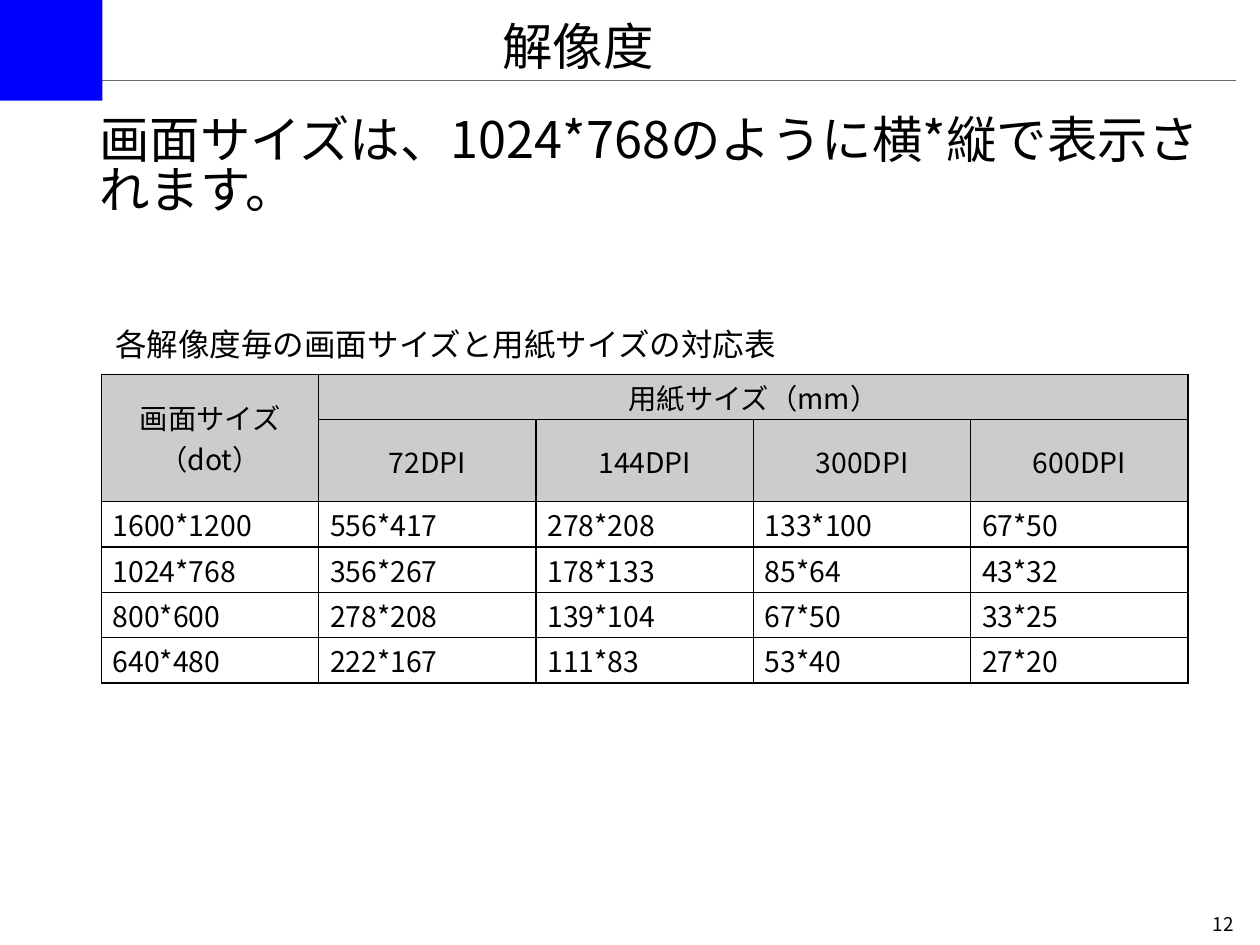
from pptx import Presentation
from pptx.dml.color import RGBColor
from pptx.enum import shapes, text
from pptx.oxml import parse_xml
from pptx.oxml.ns import nsdecls
from pptx.util import Pt

# Content
TITLE = "解像度"
BODY = "画面サイズは、1024*768のように横*縦で表示されます。"
CAPTION = "各解像度毎の画面サイズと用紙サイズの対応表"
PAGE = "12"
ROWS = [
    ("画面サイズ\n（dot）", "用紙サイズ（mm）", "", "", ""),
    ("", "72DPI", "144DPI", "300DPI", "600DPI"),
    ("1600*1200", "556*417", "278*208", "133*100", "67*50"),
    ("1024*768", "356*267", "178*133", "85*64", "43*32"),
    ("800*600", "278*208", "139*104", "67*50", "33*25"),
    ("640*480", "222*167", "111*83", "53*40", "27*20"),
]
HEADER_ROWS = 2

# Style
FONT = "Noto Sans CJK JP"
BLACK, BLUE, GREY, RULE = "000000", "0000FF", "CCCCCC", "676767"
LEFT, CENTER = text.PP_ALIGN.LEFT, text.PP_ALIGN.CENTER
TOP, MIDDLE = text.MSO_ANCHOR.TOP, text.MSO_ANCHOR.MIDDLE
ROW_H, SUBHEAD_H, TABLE_W = 28.8, 50.6, 690


def color(value):
    return RGBColor.from_string(value)


def box(x, y, w, h):
    return Pt(x), Pt(y), Pt(w), Pt(h)


def place(sp, x, y, w, h):
    sp.left, sp.top, sp.width, sp.height = box(x, y, w, h)
    return sp


def write(tf, content, size=18, align=LEFT, spacing=1.0):
    p = tf.paragraphs[0]
    p.text = content
    pPr = p._p.get_or_add_pPr()
    pPr.set("marL", "0")
    pPr.set("indent", "0")
    pPr.append(parse_xml(f"<a:buNone {nsdecls('a')}/>"))
    p.alignment, p.line_spacing, p.space_before = align, spacing, Pt(0)
    for r in p.runs:
        r.font.size, r.font.name = Pt(size), FONT
        r.font.color.rgb = color(BLACK)
        r.font._element.append(
            parse_xml(f'<a:ea {nsdecls("a")} typeface="{FONT}"/>'))


def frame(sp, anchor=TOP, side=7.2, top=3.6):
    tf = sp.text_frame
    tf.word_wrap, tf.auto_size = True, text.MSO_AUTO_SIZE.NONE
    tf.vertical_anchor = anchor
    tf.margin_left = tf.margin_right = Pt(side)
    tf.margin_top, tf.margin_bottom = Pt(top), Pt(3.6)
    return tf


def add_borders(cell):
    tcPr = cell._tc.get_or_add_tcPr()
    for side in "LRTB":
        tcPr.append(parse_xml(
            f'<a:ln{side} {nsdecls("a")} w="{Pt(1)}"><a:solidFill>'
            f'<a:srgbClr val="{BLACK}"/></a:solidFill></a:ln{side}>'))


prs = Presentation()
prs.slide_width, prs.slide_height = Pt(800), Pt(600)
s = prs.slides.add_slide(prs.slide_layouts[1])

# Header rule and corner square
rule = s.shapes.add_connector(shapes.MSO_CONNECTOR.STRAIGHT,
                              Pt(65), Pt(51), Pt(785), Pt(51))
rule.line.color.rgb, rule.line.width = color(RULE), Pt(0.5)
rule._element.spPr.append(parse_xml(f"<a:effectLst {nsdecls('a')}/>"))
square = s.shapes.add_shape(shapes.MSO_SHAPE.RECTANGLE, *box(0, 0, 65, 64))
square.shadow.inherit = False
square.fill.solid()
square.fill.fore_color.rgb = color(BLUE)
square.line.fill.background()

# Title and body
title = place(s.shapes.title, 61, 6, 612, 46)
write(frame(title, MIDDLE), TITLE, size=32, align=CENTER)
body = place(s.placeholders[1], 38, 68.4, 760, 121.7)
write(frame(body, side=25, top=7), BODY, size=32, spacing=0.82)

# Caption and page number
for content, size, area in [(CAPTION, 20, (66, 203, 688, 32)),
                            (PAGE, 12, (763, 576, 37, 23))]:
    write(frame(s.shapes.add_textbox(*area and box(*area))), content, size=size)

# Size table
heights = [ROW_H, SUBHEAD_H] + [ROW_H] * (len(ROWS) - HEADER_ROWS)
cols = len(ROWS[0])
table = s.shapes.add_table(len(ROWS), cols,
                           *box(64.4, 237.6, TABLE_W, sum(heights))).table
for column in table.columns:
    column.width = Pt(TABLE_W / cols)
for i, (values, height) in enumerate(zip(ROWS, heights)):
    table.rows[i].height = Pt(height)
    for j, value in enumerate(values):
        cell, header = table.cell(i, j), i < HEADER_ROWS
        cell.vertical_anchor = MIDDLE
        cell.margin_left = cell.margin_right = Pt(7.2)
        cell.margin_top = cell.margin_bottom = Pt(0)
        add_borders(cell)
        if header:
            cell.fill.solid()
            cell.fill.fore_color.rgb = color(GREY)
        else:
            cell.fill.background()
        write(cell.text_frame, value, align=CENTER if header else LEFT)
table.cell(0, 0).merge(table.cell(1, 0))
table.cell(0, 1).merge(table.cell(0, cols - 1))

prs.save("out.pptx")
